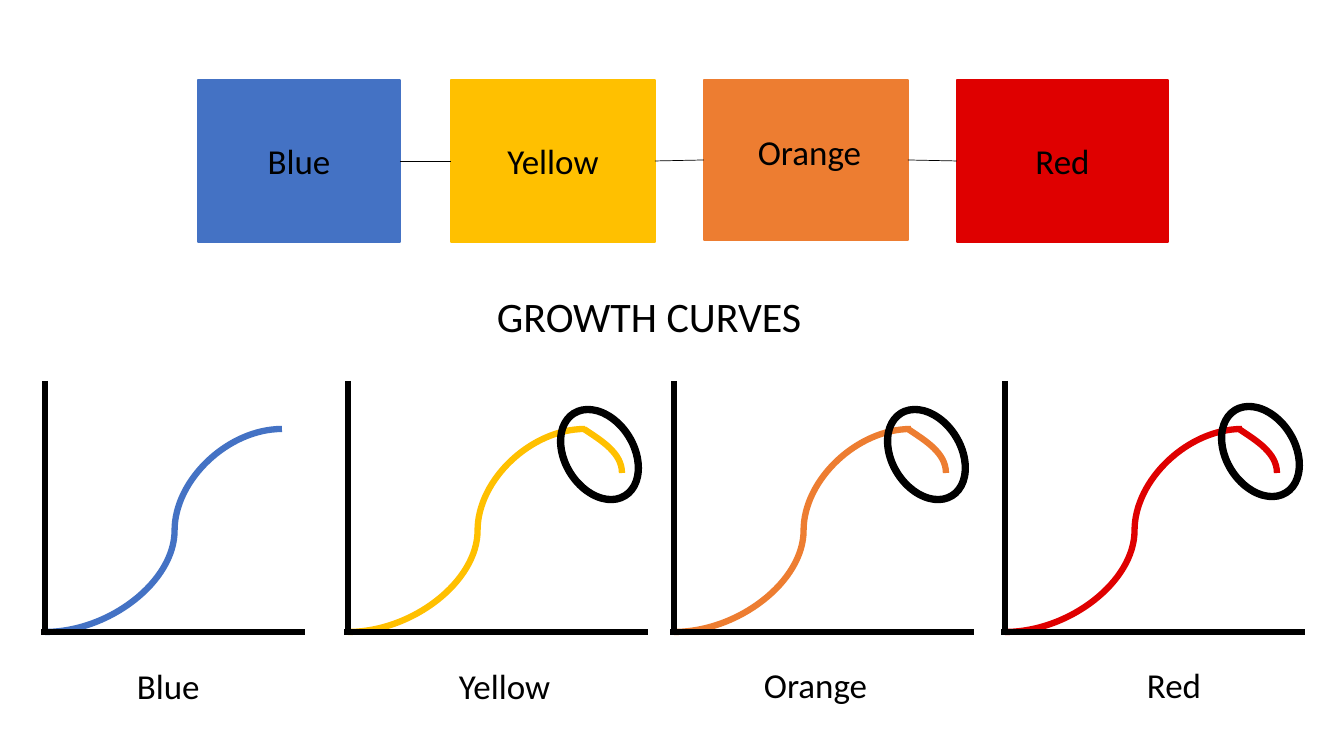
from lxml.etree import SubElement
from pptx import Presentation
from pptx.dml.color import RGBColor
from pptx.enum.shapes import MSO_CONNECTOR, MSO_SHAPE
from pptx.enum.text import MSO_ANCHOR, PP_ALIGN
from pptx.oxml.ns import qn
from pptx.util import Pt

PX = 914400 / 100.8
COLORS = {
    "Blue": "4472C4",
    "Yellow": "FFC000",
    "Orange": "ED7D31",
    "Red": "DF0000",
    "black": "000000",
}
BLACK = RGBColor.from_string(COLORS["black"])

presentation = Presentation()
presentation.slide_width = round(1344 * PX)
presentation.slide_height = round(756 * PX)
slide = presentation.slides.add_slide(presentation.slide_layouts[6])
shapes = slide.shapes


def write_text(shape, text, size=25, align=PP_ALIGN.LEFT):
    frame = shape.text_frame
    frame.word_wrap = True
    frame.text = text
    paragraph = frame.paragraphs[0]
    paragraph.alignment = align
    font = paragraph.runs[0].font
    font.name = "Calibri"
    font.size = Pt(size)
    font.color.rgb = BLACK


def add_line(kind, ends, color, width):
    """Add a shadowless connector; ends are x1, y1, x2, y2 in px."""
    connector = shapes.add_connector(kind, *(round(value * PX) for value in ends))
    connector.line.color.rgb = color
    connector.line.width = Pt(width)
    SubElement(connector._element.spPr, qn("a:effectLst"))
    return connector


# Row of linked boxes
BOX_LEFT, BOX_STEP, BOX_TOP = 198, 253, 80
boxes = []
for index, (name, width, height) in enumerate([
    ("Blue", 202, 162), ("Yellow", 204, 162), ("Orange", 204, 160), ("Red", 211, 162),
]):
    left = BOX_LEFT + index * BOX_STEP
    box = shapes.add_shape(
        MSO_SHAPE.RECTANGLE,
        *(round(value * PX) for value in (left, BOX_TOP, width, height)))
    box.shadow.inherit = False
    box.fill.solid()
    box.fill.fore_color.rgb = RGBColor.from_string(COLORS[name])
    box.line.color.rgb = RGBColor.from_string(COLORS[name])
    box.line.width = Pt(1)
    box.text_frame.vertical_anchor = MSO_ANCHOR.MIDDLE
    if name != "Orange":
        write_text(box, name, align=PP_ALIGN.CENTER)
    boxes.append(box)

for left_box, right_box in zip(boxes, boxes[1:]):
    link = add_line(MSO_CONNECTOR.STRAIGHT, (0, 0, 0, 0), BLACK, 0.5)
    link.begin_connect(left_box, 3)
    link.end_connect(right_box, 1)

# Free-standing text
for text, left, top, width, height, size, align in [
    ("Orange", 708, 126, 203, 76, 25, PP_ALIGN.CENTER),
    ("GROWTH CURVES", 487, 286, 336, 61, 30, PP_ALIGN.LEFT),
    ("Blue", 127, 660, 92, 52, 25, PP_ALIGN.LEFT),
    ("Yellow", 449, 660, 125, 52, 25, PP_ALIGN.LEFT),
    ("Orange", 754, 659, 170, 52, 25, PP_ALIGN.LEFT),
    ("Red", 1137, 659, 78, 52, 25, PP_ALIGN.LEFT),
]:
    text_box = shapes.add_textbox(
        *(round(value * PX) for value in (left, top, width, height)))
    write_text(text_box, text, size, align)

# Growth curves: all but the first end in a circled decline
AXIS_TOP, AXIS_BOTTOM, CURVE_TOP = 381, 632, 429
DECLINE = [(0, 0), (18, 12), (38, 24), (38, 44)]
DECLINE_STEPS = 16

for name, origin, axis_length, decline_start, ring_left, ring_top in [
    ("Blue", 45, 260, None, None, None),
    ("Yellow", 348, 300, 584, 562, 403),
    ("Orange", 674, 300, 908, 889, 403),
    ("Red", 1005, 300, 1239, 1223, 400),
]:
    color = RGBColor.from_string(COLORS[name])
    curve = add_line(
        MSO_CONNECTOR.CURVE, (origin, AXIS_BOTTOM, origin + 237, CURVE_TOP), color, 4.5)
    adjustments = curve._element.spPr.find(qn("a:prstGeom")).find(qn("a:avLst"))
    SubElement(adjustments, qn("a:gd"), name="adj1", fmla="val 54700")
    add_line(MSO_CONNECTOR.STRAIGHT, (origin, AXIS_TOP, origin, AXIS_BOTTOM), BLACK, 4.5)
    add_line(
        MSO_CONNECTOR.STRAIGHT,
        (origin + axis_length, AXIS_BOTTOM, origin - 4, AXIS_BOTTOM), BLACK, 4.5)
    if decline_start is None:
        continue

    points = []
    for step in range(DECLINE_STEPS + 1):
        t = step / DECLINE_STEPS
        weights = ((1 - t) ** 3, 3 * t * (1 - t) ** 2, 3 * t ** 2 * (1 - t), t ** 3)
        x = decline_start + sum(w * p[0] for w, p in zip(weights, DECLINE))
        y = CURVE_TOP + sum(w * p[1] for w, p in zip(weights, DECLINE))
        points.append((round(x * PX), round(y * PX)))
    builder = shapes.build_freeform(*points[0])
    builder.add_line_segments(points[1:], close=False)
    decline = builder.convert_to_shape()
    decline.shadow.inherit = False
    decline.fill.background()
    decline.line.color.rgb = color
    decline.line.width = Pt(4.5)

    ring = shapes.add_shape(
        MSO_SHAPE.DONUT, *(round(value * PX) for value in (ring_left, ring_top, 75, 103)))
    ring.adjustments[0] = 0.08
    ring.rotation = 328.2
    ring.shadow.inherit = False
    ring.fill.solid()
    ring.fill.fore_color.rgb = BLACK
    ring.line.color.rgb = BLACK
    ring.line.width = Pt(1)

presentation.save("out.pptx")
